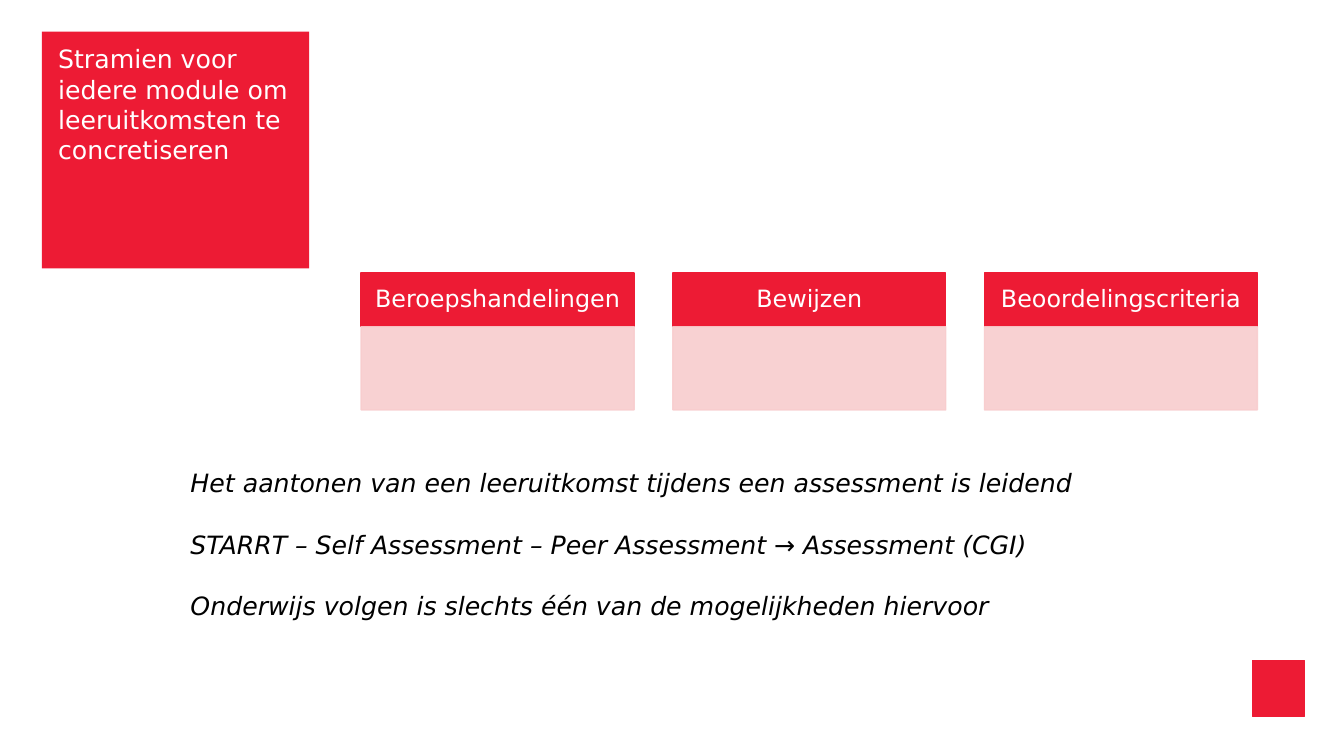
from dataclasses import dataclass

from lxml import etree
from pptx import Presentation
from pptx.dml.color import RGBColor
from pptx.enum.shapes import MSO_SHAPE
from pptx.enum.text import MSO_ANCHOR, MSO_AUTO_SIZE, PP_ALIGN
from pptx.oxml.ns import qn
from pptx.shapes.autoshape import Shape
from pptx.slide import Slide
from pptx.util import Inches, Pt

RED = RGBColor(0xED, 0x1B, 0x34)
PINK = RGBColor(0xF8, 0xCD, 0xCE)
WHITE = RGBColor(0xFF, 0xFF, 0xFF)
BLACK = RGBColor(0x00, 0x00, 0x00)
FONT = "DejaVu Sans"

RECTANGLE = MSO_SHAPE.RECTANGLE
TOP, MIDDLE = MSO_ANCHOR.TOP, MSO_ANCHOR.MIDDLE
LEFT, CENTER = PP_ALIGN.LEFT, PP_ALIGN.CENTER
NO_RESIZE = MSO_AUTO_SIZE.NONE

SLIDE_WIDTH, SLIDE_HEIGHT = Inches(13.33), Inches(7.5)
COLUMN, ROW = SLIDE_WIDTH / 160, SLIDE_HEIGHT / 90


@dataclass(frozen=True)
class Area:
    column: float
    row: float
    columns: float
    rows: float

    def emu(self) -> tuple[int, int, int, int]:
        return (round(self.column * COLUMN), round(self.row * ROW),
                round(self.columns * COLUMN), round(self.rows * ROW))


@dataclass(frozen=True)
class Card:
    heading: str
    position: int

    def header(self) -> Area:
        return Area(CARD_START + self.position * CARD_PITCH, 32.5, CARD_WIDTH, 6.4)

    def body(self) -> Area:
        return Area(CARD_START + self.position * CARD_PITCH, 38.9, CARD_WIDTH, 9.9)


CARD_START, CARD_PITCH, CARD_WIDTH = 43, 37.1, 32.5
TITLE_AREA = Area(5, 3.75, 31.8, 28.2)
STATEMENTS_AREA = Area(21.5, 55.1, 118.8, 19.4)
EMBLEM_AREA = Area(149.1, 78.6, 6.2, 6.7)

TITLE = "Stramien voor iedere module om leeruitkomsten te concretiseren"
HEADINGS = ("Beroepshandelingen", "Bewijzen", "Beoordelingscriteria")
STATEMENTS = (
    "Het aantonen van een leeruitkomst tijdens een assessment is leidend",
    "STARRT – Self Assessment – Peer Assessment → Assessment (CGI)",
    "Onderwijs volgen is slechts één van de mogelijkheden hiervoor",
)


def add_block(slide: Slide, area: Area, color: RGBColor) -> Shape:
    block = slide.shapes.add_shape(RECTANGLE, *area.emu())
    block.shadow.inherit = False
    block.fill.solid()
    block.fill.fore_color.rgb = color
    block.line.color.rgb = color
    block.line.width = Pt(1)
    return block


def set_opacity(block: Shape, percent: int) -> None:
    for color in block._element.spPr.iter(qn("a:srgbClr")):
        etree.SubElement(color, qn("a:alpha")).set("val", str(percent * 1000))


def add_title(slide: Slide) -> None:
    title = slide.shapes.title
    title.left, title.top, title.width, title.height = TITLE_AREA.emu()
    title.fill.solid()
    title.fill.fore_color.rgb = RED
    frame = title.text_frame
    frame.text = TITLE
    frame.word_wrap = True
    frame.auto_size = NO_RESIZE
    frame.vertical_anchor = TOP
    frame.margin_left = Inches(0.16)
    frame.margin_top = frame.margin_right = frame.margin_bottom = Inches(0.12)
    paragraph = frame.paragraphs[0]
    paragraph.alignment = LEFT
    paragraph.font.name = FONT
    paragraph.font.size = Pt(18)
    paragraph.font.color.rgb = WHITE


def add_card(slide: Slide, card: Card) -> None:
    frame = add_block(slide, card.header(), RED).text_frame
    frame.text = card.heading
    frame.word_wrap = True
    frame.vertical_anchor = MIDDLE
    frame.margin_left = frame.margin_right = Inches(0.1)
    frame.margin_top = frame.margin_bottom = Inches(0.08)
    paragraph = frame.paragraphs[0]
    paragraph.alignment = CENTER
    paragraph.line_spacing = 0.9
    paragraph.font.name = FONT
    paragraph.font.size = Pt(17)
    paragraph.font.color.rgb = WHITE
    set_opacity(add_block(slide, card.body(), PINK), 90)


def add_statements(slide: Slide) -> None:
    frame = slide.shapes.add_textbox(*STATEMENTS_AREA.emu()).text_frame
    frame.word_wrap = True
    frame.text = "\n".join(STATEMENTS)
    for paragraph in frame.paragraphs:
        paragraph.font.name = FONT
        paragraph.font.size = Pt(18)
        paragraph.font.italic = True
        paragraph.font.color.rgb = BLACK
    for paragraph in frame.paragraphs[1:]:
        paragraph.space_before = Pt(22)


def main() -> None:
    presentation = Presentation()
    presentation.slide_width = SLIDE_WIDTH
    presentation.slide_height = SLIDE_HEIGHT
    slide = presentation.slides.add_slide(presentation.slide_layouts[5])
    add_block(slide, EMBLEM_AREA, RED)
    add_title(slide)
    for position, heading in enumerate(HEADINGS):
        add_card(slide, Card(heading, position))
    add_statements(slide)
    presentation.save("out.pptx")


if __name__ == "__main__":
    main()
